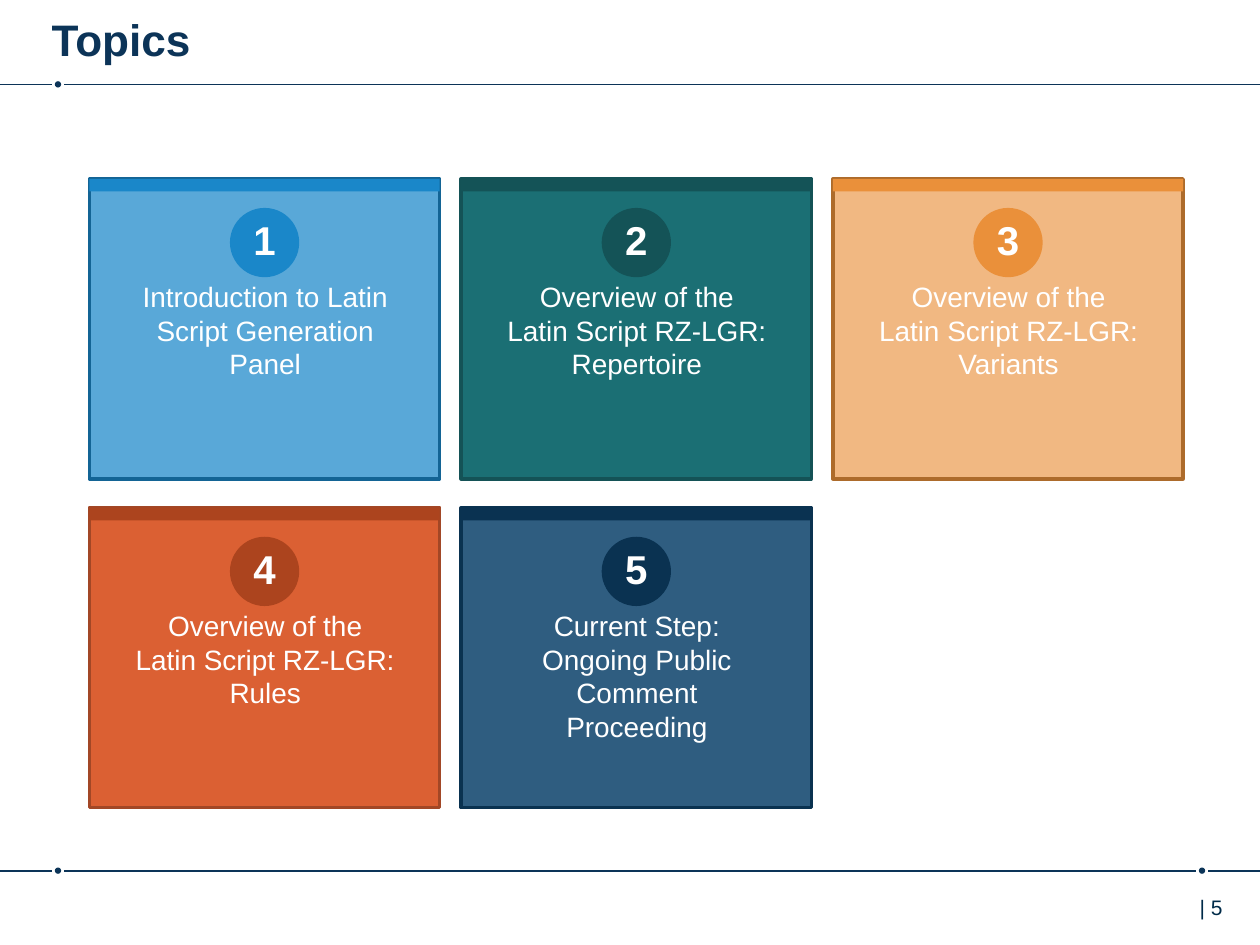
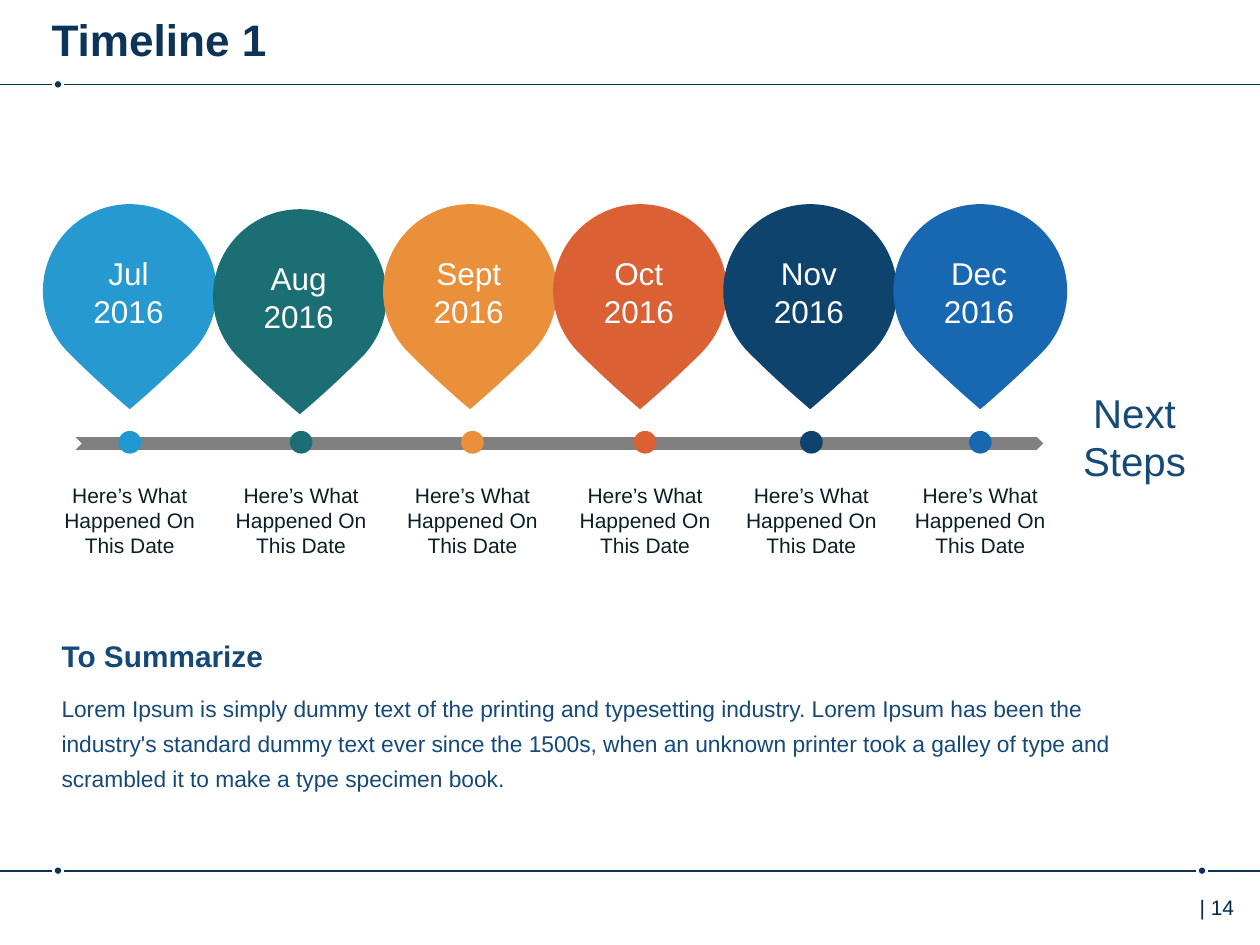
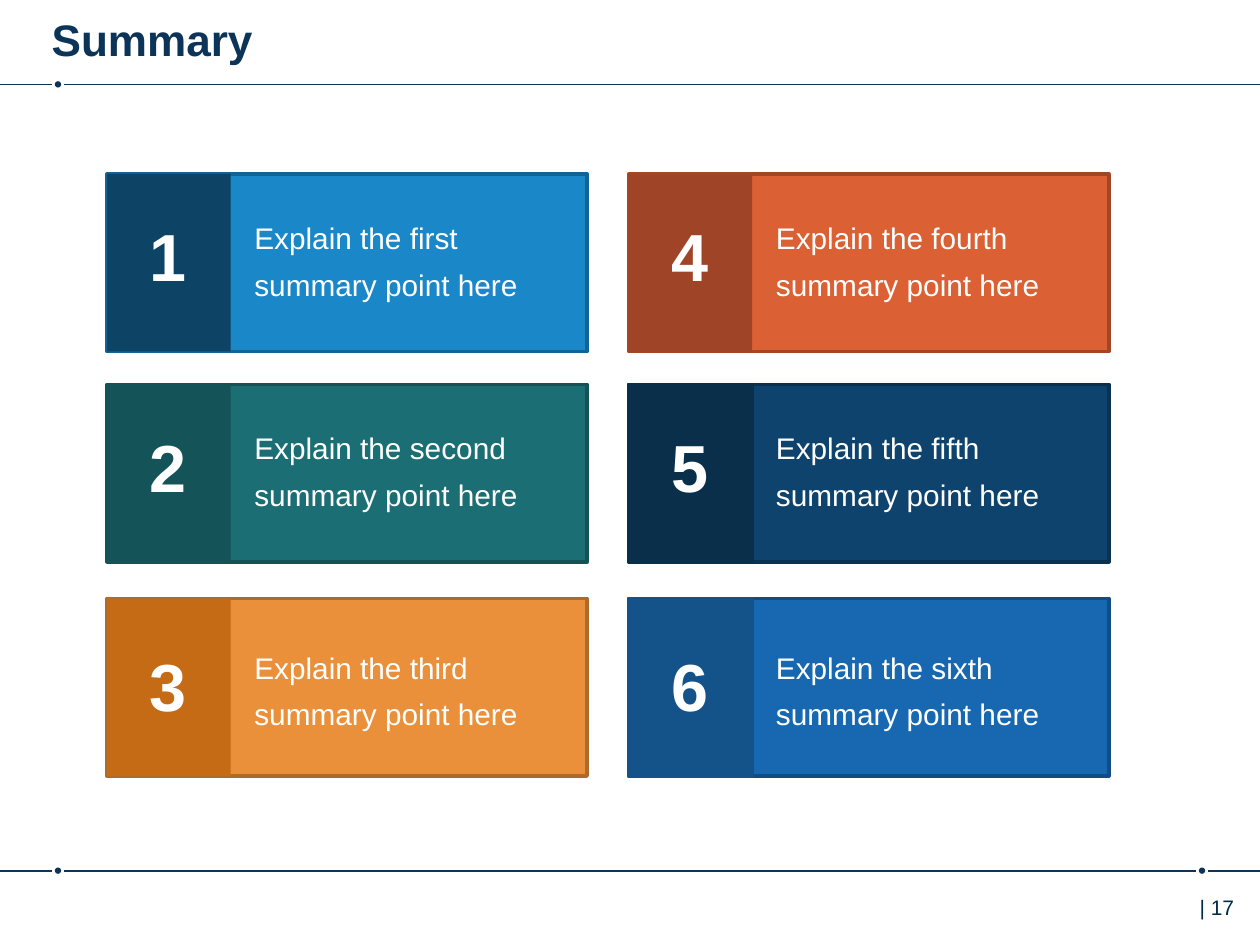
from dataclasses import dataclass

from lxml import etree
from pptx import Presentation
from pptx.dml.color import RGBColor
from pptx.enum.shapes import MSO_CONNECTOR, MSO_SHAPE
from pptx.enum.text import MSO_ANCHOR, MSO_AUTO_SIZE, PP_ALIGN
from pptx.oxml.ns import qn
from pptx.util import Inches, Pt

RECT, ELLIPSE = MSO_SHAPE.RECTANGLE, MSO_SHAPE.OVAL
TEARDROP, CHEVRON = MSO_SHAPE.TEAR, MSO_SHAPE.CHEVRON
STRAIGHT = MSO_CONNECTOR.STRAIGHT
LEFT, CENTER = PP_ALIGN.LEFT, PP_ALIGN.CENTER
TOP = MSO_ANCHOR.TOP
TITLE_ONLY = 5
SLIDE_W, SLIDE_H = 10, 7.5


@dataclass(frozen=True)
class Theme:
    font: str = "Arial"
    navy: str = "0C3458"
    footer: str = "002B49"
    heading: str = "154A78"
    caption: str = "0A1F24"
    white: str = "FFFFFF"
    gray: str = "808080"
    sky: str = "1A87C9"
    sky_edge: str = "136495"
    teal: str = "1B6F74"
    teal_edge: str = "145256"
    teal_dark: str = "145357"
    orange: str = "EA903A"
    orange_edge: str = "AD6B2B"
    orange_dark: str = "C66B15"
    red: str = "DB6033"
    red_edge: str = "A24726"
    red_dark: str = "AC441E"
    brick: str = "9F4427"
    ocean: str = "0D436C"
    ocean_edge: str = "0A3250"
    ocean_dark: str = "0A3251"
    midnight: str = "092F4B"
    blue: str = "1768B1"
    blue_edge: str = "114D83"
    blue_dark: str = "14528A"
    petrol: str = "0D4364"
    azure: str = "2599D0"
    azure_dot: str = "1D98D3"
    title_size: float = 25.2
    numeral_size: float = 38
    large_size: float = 23
    month_size: float = 18
    lead_size: float = 17
    card_size: float = 16
    body_size: float = 13
    small_size: float = 12


T = Theme()


@dataclass(frozen=True)
class Box:
    left: float
    top: float
    width: float
    height: float

    def inset(self, dx, dy, width=None, height=None):
        """A box offset from this one, as wide and high as it unless told."""
        return Box(self.left + dx, self.top + dy,
                   width or self.width, height or self.height)

    def centered(self, dy, size):
        return self.inset((self.width - size) / 2, dy, size, size)

    def emu(self):
        return [Inches(v) for v in (self.left, self.top, self.width, self.height)]


def rgb(color):
    return RGBColor.from_string(color)


def add_shape(shapes, kind, box, fill, edge=None, opacity=100):
    shape = shapes.add_shape(kind, *box.emu())
    shape.shadow.inherit = False
    shape.fill.solid()
    shape.fill.fore_color.rgb = rgb(fill)
    if opacity < 100:
        color = shape._element.spPr.find(".//" + qn("a:srgbClr"))
        etree.SubElement(color, qn("a:alpha"), val=str(opacity * 1000))
    if edge:
        shape.line.color.rgb = rgb(edge)
        shape.line.width = Pt(2)
    else:
        shape.line.fill.background()
    return shape


def write(frame, lines, size, color, bold=False, align=LEFT, spacing=None):
    frame.word_wrap = True
    frame.auto_size = MSO_AUTO_SIZE.NONE
    frame.vertical_anchor = TOP
    for i, line in enumerate(lines):
        paragraph = frame.add_paragraph() if i else frame.paragraphs[0]
        paragraph.alignment = align
        if spacing:
            paragraph.line_spacing = Pt(spacing)
        run = paragraph.add_run()
        run.text = line
        run.font.name = T.font
        run.font.size = Pt(size)
        run.font.bold = bold
        run.font.color.rgb = rgb(color)


def add_text(shapes, box, lines, size, color, **style):
    frame = shapes.add_textbox(*box.emu()).text_frame
    write(frame, lines, size, color, **style)
    return frame


def add_rule(shapes, y, dots):
    """Draw a line across the slide, broken around each dot."""
    gap, diameter = 0.05, 0.05
    starts = [0] + [dot + gap for dot in dots]
    ends = [dot - gap for dot in dots] + [SLIDE_W]
    for start, end in zip(starts, ends):
        line = shapes.add_connector(
            STRAIGHT, Inches(start), Inches(y), Inches(end), Inches(y))
        line.line.color.rgb = rgb(T.navy)
        line.line.width = Pt(1)
        etree.SubElement(line._element.spPr, qn("a:effectLst"))
    for dot in dots:
        add_shape(shapes, ELLIPSE,
                  Box(dot - diameter / 2, y - diameter / 2, diameter, diameter),
                  T.navy)


def add_slide(prs, title, number):
    slide = prs.slides.add_slide(prs.slide_layouts[TITLE_ONLY])
    shapes = slide.shapes
    heading = shapes.title
    heading.left, heading.top, heading.width, heading.height = Box(
        0.41, 0.05, 8.76, 0.49).emu()
    frame = heading.text_frame
    frame.margin_left = frame.margin_right = 0
    frame.margin_top = frame.margin_bottom = Inches(0.05)
    write(frame, [title], T.title_size, T.navy, bold=True)
    add_rule(shapes, 0.67, [0.46])
    add_rule(shapes, 6.91, [0.46, 9.54])
    footer = add_text(shapes, Box(9.29, 7.05, 0.71, 0.4), [f"| {number}"],
                      T.small_size, T.footer)
    footer.margin_left, footer.margin_right = Inches(0.23), 0
    return shapes


def add_topic_card(shapes, box, number, lines, fill, opacity, edge, accent):
    add_shape(shapes, RECT, box, fill, edge, opacity)
    add_shape(shapes, RECT, box.inset(0, 0, height=0.1), accent)
    add_shape(shapes, ELLIPSE, box.centered(0.23, 0.55), accent)
    add_text(shapes, box.inset(0.26, 0.75, 2.27, 1.18), lines,
             T.card_size, T.white, align=CENTER)
    add_text(shapes, box.inset(0, 0.24, height=0.49), [str(number)],
             T.large_size, T.white, bold=True, align=CENTER)


def build_topics(prs):
    shapes = add_slide(prs, "Topics", 5)
    latin = "Overview of the Latin Script RZ-LGR: "
    topics = [
        (["Introduction to Latin Script Generation Panel"],
         T.sky, 72, T.sky_edge, T.sky),
        ([latin + "Repertoire"], T.teal, 100, T.teal_edge, T.teal_dark),
        ([latin + "Variants"], T.orange, 63, T.orange_edge, T.orange),
        ([latin + "Rules"], T.red, 100, T.red_edge, T.red_dark),
        (["Current Step:", "Ongoing Public Comment Proceeding"],
         T.ocean, 86, T.ocean_edge, T.ocean_dark),
    ]
    first = Box(0.71, 1.42, 2.78, 2.38)
    for i, topic in enumerate(topics):
        row, column = divmod(i, 3)
        add_topic_card(shapes, first.inset(2.95 * column, 2.61 * row), i + 1, *topic)


def add_milestone(shapes, box, month, color, dot_color, drop, shift):
    """Place a month's pin, dot and caption; drop lowers the pin, shift moves the rest."""
    pin = shapes.add_group_shape().shapes
    teardrop = add_shape(pin, TEARDROP, box.inset(0, drop, 1.38, 1.38), color)
    teardrop.adjustments[0] = 0.961
    teardrop.rotation = 135
    add_text(pin, box.inset(0.03, 0.35 + drop, 1.3, 0.71), [month, "2016"],
             T.month_size, T.white, align=CENTER)
    add_shape(shapes, ELLIPSE, box.inset(0.6 + shift, 1.8, 0.18, 0.18), dot_color)
    add_text(shapes, box.inset(0.04 + shift, 2.16, 1.3, 0.71),
             ["Here’s What Happened On This Date"],
             T.small_size, T.caption, align=CENTER)


def add_summary_text(shapes, box):
    add_text(shapes, box.inset(0, 0, 7.85, 0.38), ["To Summarize"],
             T.lead_size, T.heading, bold=True, spacing=19.8)
    add_text(shapes, box.inset(0, 0.39, height=0.94),
             ["Lorem Ipsum is simply dummy text of the printing and typesetting "
              "industry. Lorem Ipsum has been the industry's standard dummy text "
              "ever since the 1500s, when an unknown printer took a galley of type "
              "and scrambled it to make a type specimen book."],
             T.body_size, T.heading, spacing=19.8)


def build_timeline(prs):
    shapes = add_slide(prs, "Timeline 1", 14)
    add_shape(shapes, CHEVRON, Box(0.6, 3.47, 7.68, 0.1), T.gray)
    milestones = [
        ("Jul", T.azure, T.azure_dot, 0, 0),
        ("Aug", T.teal, T.teal, 0.04, 0.01),
        ("Sept", T.orange, T.orange, 0, 0.02),
        ("Oct", T.red, T.red, 0, 0.04),
        ("Nov", T.ocean, T.ocean, 0, 0.01),
        ("Dec", T.blue, T.blue, 0, 0),
    ]
    first = Box(0.34, 1.62, 1.38, 2.87)
    for i, milestone in enumerate(milestones):
        add_milestone(shapes, first.inset(1.35 * i, 0), *milestone)
    add_text(shapes, Box(8.3, 3.03, 1.41, 0.91), ["Next", "Steps"],
             T.large_size, T.heading, align=CENTER)
    add_summary_text(shapes, Box(0.39, 5.02, 8.86, 1.33))


def add_summary_point(shapes, box, number, ordinal, fill, edge, panel,
                      panel_edge, drop):
    add_shape(shapes, RECT, box, fill, edge)
    add_shape(shapes, RECT, box.inset(0, 0, 0.98), panel, panel_edge)
    add_text(shapes, box.inset(0.24, 0.28 + drop, 0.74, 0.74), [str(number)],
             T.numeral_size, T.white, bold=True)
    add_text(shapes, box.inset(1.07, 0.23 + drop, 2.35, 0.86),
             [f"Explain the {ordinal} summary point here"],
             T.lead_size, T.white, spacing=26.6)


def build_summary(prs):
    shapes = add_slide(prs, "Summary", 17)
    points = [
        ("first", T.sky, T.sky_edge, T.petrol, None),
        ("second", T.teal, T.teal_edge, T.teal_dark, None),
        ("third", T.orange, T.orange_edge, T.orange_dark, None),
        ("fourth", T.red, T.red_edge, T.brick, None),
        ("fifth", T.ocean, T.ocean_edge, T.midnight, T.midnight),
        ("sixth", T.blue, T.blue_edge, T.blue_dark, T.blue_dark),
    ]
    rows = [(1.38, 0), (3.05, 0), (4.75, 0.04)]
    for i, point in enumerate(points):
        column, row = divmod(i, len(rows))
        top, drop = rows[row]
        add_summary_point(shapes, Box(0.85 + 4.14 * column, top, 3.81, 1.41),
                          i + 1, *point, drop)


def main():
    prs = Presentation()
    prs.slide_width, prs.slide_height = Inches(SLIDE_W), Inches(SLIDE_H)
    build_topics(prs)
    build_timeline(prs)
    build_summary(prs)
    prs.save("out.pptx")


if __name__ == "__main__":
    main()
